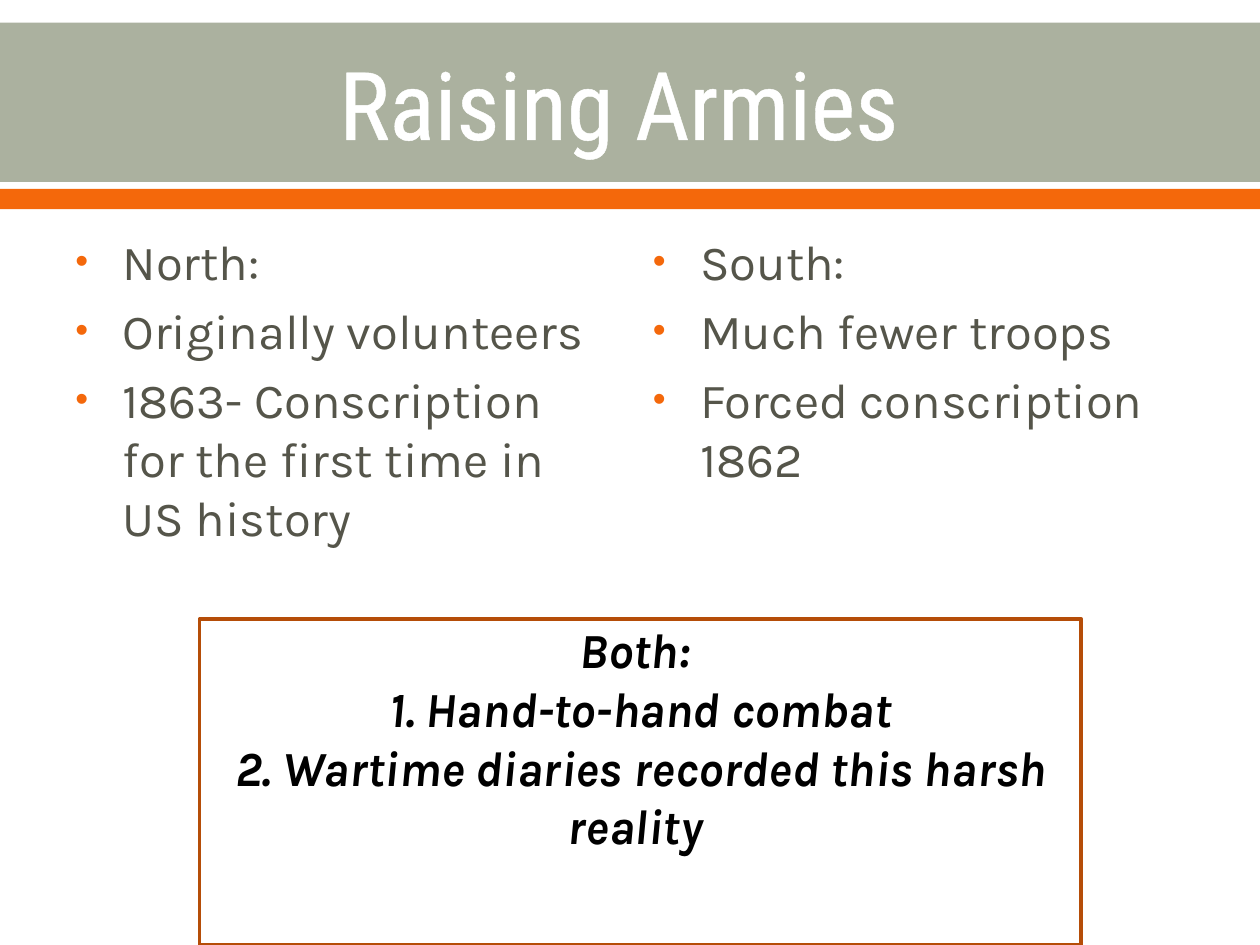
from lxml import etree
from pptx import Presentation
from pptx import util as u
from pptx.dml.color import RGBColor
from pptx.enum import shapes, text
from pptx.oxml.ns import qn

Pt = u.Pt

# Content
TITLE = "Raising Armies "
COLUMNS = [
    ["North:", "Originally volunteers",
     "1863- Conscription for the first time in US history"],
    ["South:", "Much fewer troops", "Forced conscription 1862"],
]
BOTH = ["Both: \v1. Hand-to-hand combat",
        "2. Wartime diaries recorded this harsh reality "]

COLORS = {"band": "ABB19F", "accent": "F4680B", "white": "FFFFFF",
          "body": "55554A", "frame": "B54D08", "black": "000000"}

# Layout
WIDTH, HEIGHT = 720, 540
MARGIN, COLUMN_W, COLUMN_TOP = 36, 318, 126
COLUMN_HEIGHTS = [240, 356]
INDENT = 27


def rgb(name):
    return RGBColor.from_string(COLORS[name])


def add_rect(box, fill=None, line=None):
    sp = slide.shapes.add_shape(shapes.MSO_SHAPE.RECTANGLE, *map(Pt, box))
    sp.shadow.inherit = False
    if fill:
        sp.fill.solid()
        sp.fill.fore_color.rgb = rgb(fill)
    else:
        sp.fill.background()
    if line:
        sp.line.color.rgb = rgb(line)
        sp.line.width = Pt(2.25)
    else:
        sp.line.fill.background()
    return sp


def add_bullet(p):
    pPr = p._p.get_or_add_pPr()
    pPr.set("marL", str(Pt(INDENT)))
    pPr.set("indent", str(-Pt(INDENT)))
    clr = etree.SubElement(pPr, qn("a:buClr"))
    etree.SubElement(clr, qn("a:srgbClr"), val=COLORS["accent"])
    etree.SubElement(pPr, qn("a:buSzPct"), val="75000")
    etree.SubElement(pPr, qn("a:buFont"), typeface="Arial")
    etree.SubElement(pPr, qn("a:buChar"), char="•")


def add_outline(r, color, width):
    ln = etree.Element(qn("a:ln"), w=str(Pt(width)))
    fill = etree.SubElement(ln, qn("a:solidFill"))
    etree.SubElement(fill, qn("a:srgbClr"), val=COLORS[color])
    r._r.get_or_add_rPr().insert(0, ln)


def write(sp, lines, font="Karla", size=28, color="body", bold=False,
          italic=False, align="LEFT", anchor="TOP", inset=3.6, gap=0,
          bullet=False, outline=None):
    tf = sp.text_frame
    tf.word_wrap = True
    tf.vertical_anchor = text.MSO_ANCHOR[anchor]
    tf.margin_top = Pt(inset)
    for i, line in enumerate(lines):
        p = tf.paragraphs[0] if i == 0 else tf.add_paragraph()
        p.text = line
        p.alignment = text.PP_ALIGN[align]
        p.space_before = Pt(gap if i else 0)
        if bullet:
            add_bullet(p)
        for r in p.runs:
            r.font.name, r.font.size = font, Pt(size)
            r.font.bold, r.font.italic = bold, italic
            r.font.color.rgb = rgb(color)
            if outline:
                add_outline(r, color, outline)


prs = Presentation()
prs.slide_width, prs.slide_height = Pt(WIDTH), Pt(HEIGHT)
slide = prs.slides.add_slide(prs.slide_layouts[6])

# Title band and accent stripe
add_rect((0, 13, WIDTH, 91), fill="band")
add_rect((0, 108, WIDTH, 11.5), fill="accent")
title = slide.shapes.add_textbox(Pt(MARGIN), Pt(14.4),
                                 Pt(WIDTH - 2 * MARGIN), Pt(88))
write(title, [TITLE], font="Roboto Condensed", size=54, color="white",
      align="CENTER", anchor="MIDDLE", outline=1.1)

# North and South columns, flush with the side margins
lefts = [MARGIN, WIDTH - MARGIN - COLUMN_W]
for left, height, lines in zip(lefts, COLUMN_HEIGHTS, COLUMNS):
    column = slide.shapes.add_textbox(Pt(left), Pt(COLUMN_TOP),
                                      Pt(COLUMN_W), Pt(height))
    write(column, lines, inset=6, gap=6, bullet=True)

# Framed points shared by both sides
both = add_rect((114, 354, 504, 186), line="frame")
write(both, BOTH, color="black", bold=True, italic=True, align="CENTER",
      inset=0)

prs.save("out.pptx")
